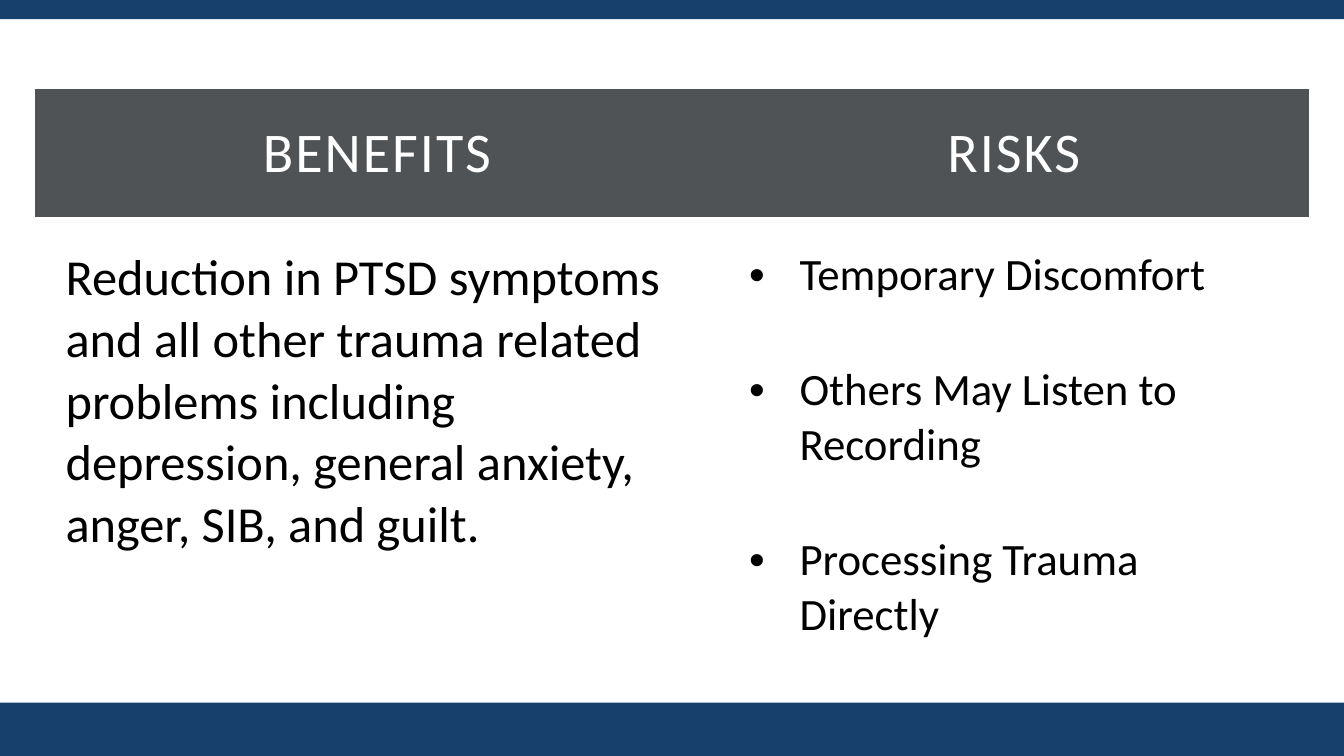
from lxml import etree
from pptx import Presentation
from pptx import util as u
from pptx.dml import color
from pptx.enum import shapes, text
from pptx.oxml import ns

COLORS = {"band": "17406D", "header": "505356", "light": "FFFFFF", "dark": "000000"}
FONT = "Calibri"
PAGE_WIDTH, PAGE_HEIGHT = 13.33, 7.5
BENEFITS = ("Reduction in PTSD symptoms and all other trauma related problems "
            "including depression, general anxiety, anger, SIB, and guilt.")
RISKS = ["Temporary Discomfort", "Others May Listen to Recording",
         "Processing Trauma Directly"]


def rgb(name):
    return color.RGBColor.from_string(COLORS[name])


def add_band(page, left, top, width, height):
    band = page.shapes.add_shape(shapes.MSO_SHAPE.RECTANGLE, u.Inches(left),
                                 u.Inches(top), u.Inches(width), u.Inches(height))
    band.shadow.inherit = False
    band.fill.solid()
    band.fill.fore_color.rgb = rgb("band")
    band.line.fill.background()


def write(cell, words, size, ink="dark", align=text.PP_ALIGN.LEFT,
          spacing=0, bullet=False):
    para = cell.text_frame.paragraphs[0]
    para.alignment = align
    span = para.add_run()
    span.text = words
    span.font.name = FONT
    span.font.size = u.Pt(size)
    span.font.bold = False
    span.font.color.rgb = rgb(ink)
    if spacing:
        span.font._element.set("spc", str(int(spacing * 100)))
    if bullet:
        props = para._p.get_or_add_pPr()
        props.set("marL", str(u.Inches(0.5)))
        props.set("indent", str(u.Inches(-0.5)))
        etree.SubElement(props, ns.qn("a:buFont"), typeface="Arial")
        etree.SubElement(props, ns.qn("a:buChar"), char="•")


def style_cell(cell, fill=None):
    cell.margin_left = cell.margin_right = u.Inches(0.3)
    cell.margin_top = cell.margin_bottom = u.Inches(0.3)
    # Borders come before the fill in the cell properties
    props = cell._tc.get_or_add_tcPr()
    for side in ("a:lnL", "a:lnR", "a:lnT", "a:lnB"):
        border = etree.SubElement(props, ns.qn(side), w="0")
        etree.SubElement(border, ns.qn("a:noFill"))
    if fill:
        cell.fill.solid()
        cell.fill.fore_color.rgb = rgb(fill)
    else:
        cell.fill.background()


def add_comparison(page, left, top, width, height):
    frame = page.shapes.add_table(len(RISKS) + 1, 2, u.Inches(left), u.Inches(top),
                                  u.Inches(width), u.Inches(height))
    table = frame.table
    table.first_row = table.horz_banding = False
    benefits_width = 6.78
    table.columns[0].width = u.Inches(benefits_width)
    table.columns[1].width = u.Inches(width - benefits_width)
    header_height = 1.2
    for index, row in enumerate(table.rows):
        row.height = u.Inches(1.1 if index else header_height)
        for cell in row.cells:
            style_cell(cell, None if index else "header")

    # Headings
    for column, heading in enumerate(("BENEFITS", "RISKS")):
        write(table.cell(0, column), heading, 40, ink="light",
              align=text.PP_ALIGN.CENTER, spacing=1.5)

    # Benefits span every risk row
    table.cell(1, 0).merge(table.cell(len(RISKS), 0))
    write(table.cell(1, 0), BENEFITS, 36)
    for index, risk in enumerate(RISKS, start=1):
        write(table.cell(index, 1), risk, 32, bullet=True)


def main():
    deck = Presentation()
    deck.slide_width = u.Inches(PAGE_WIDTH)
    deck.slide_height = u.Inches(PAGE_HEIGHT)
    page = deck.slides.add_slide(deck.slide_layouts[6])
    page.background.fill.solid()
    page.background.fill.fore_color.rgb = rgb("light")

    # Top and bottom bands
    for top, height in ((0, 0.19), (6.97, 0.53)):
        add_band(page, 0, top, PAGE_WIDTH, height)

    # Benefits and risks
    add_comparison(page, 0.35, 0.88, 12.63, 4.5)
    deck.save("out.pptx")


if __name__ == "__main__":
    main()
